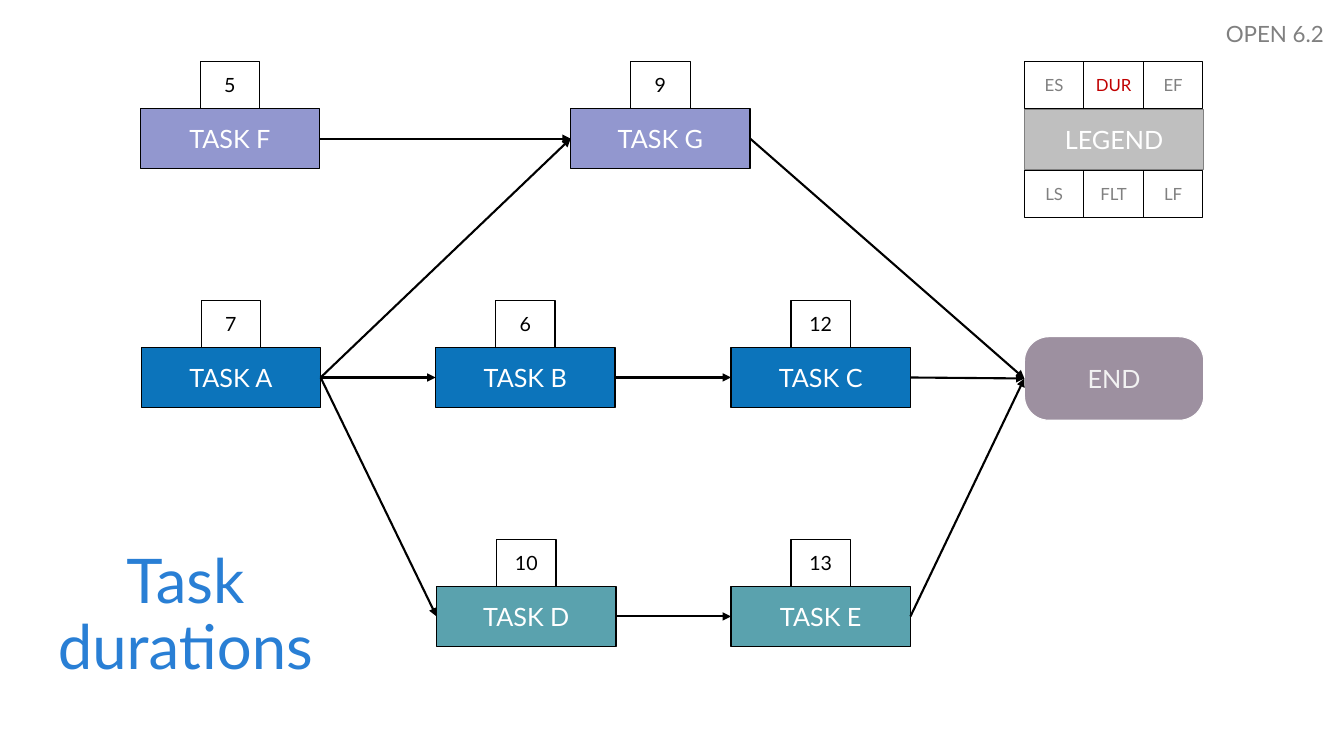
from dataclasses import dataclass

from lxml import etree
from pptx import Presentation
from pptx.dml.color import RGBColor
from pptx.enum.shapes import MSO_CONNECTOR, MSO_SHAPE
from pptx.enum.text import MSO_ANCHOR, PP_ALIGN
from pptx.oxml.ns import qn
from pptx.util import Inches, Pt

RECT, ROUND = MSO_SHAPE.RECTANGLE, MSO_SHAPE.ROUNDED_RECTANGLE
STRAIGHT = MSO_CONNECTOR.STRAIGHT
MIDDLE, TOP = MSO_ANCHOR.MIDDLE, MSO_ANCHOR.TOP
CENTER, RIGHT = PP_ALIGN.CENTER, PP_ALIGN.RIGHT
LEFT_SITE, RIGHT_SITE = 1, 3


@dataclass(frozen=True)
class Theme:
    font: str = "Lato"
    black: str = "000000"
    white: str = "FFFFFF"
    gray: str = "808080"
    silver: str = "BFBFBF"
    pale: str = "F2F2F2"
    red: str = "C00000"
    blue: str = "0C74BB"
    teal: str = "5AA2AE"
    violet: str = "9297CF"
    mauve: str = "9D90A0"
    sky: str = "297FD5"
    title: int = 44
    task: int = 18
    note: int = 16
    time: int = 14
    key: int = 12
    edge: float = 0.85
    arrow: float = 1.5


theme = Theme()


def write(shape, text, size=theme.task, color=theme.white, align=CENTER,
          anchor=MIDDLE, space=None):
    frame = shape.text_frame
    frame.word_wrap = True
    frame.vertical_anchor = anchor
    para = frame.paragraphs[0]
    para.alignment = align
    para.line_spacing = space
    run = para.add_run()
    run.text = text
    run.font.name = theme.font
    run.font.size = Pt(size)
    run.font.color.rgb = RGBColor.from_string(color)


def box(text, left, top, width, height, fill=None, line=theme.black,
        kind=RECT, **style):
    shape = slide.shapes.add_shape(
        kind, Inches(left), Inches(top), Inches(width), Inches(height))
    shape.shadow.inherit = False
    if fill:
        shape.fill.solid()
        shape.fill.fore_color.rgb = RGBColor.from_string(fill)
    else:
        shape.fill.background()
    shape.line.color.rgb = RGBColor.from_string(line)
    shape.line.width = Pt(theme.edge)
    shape.text_frame.margin_left = shape.text_frame.margin_right = 0
    write(shape, text, **style)
    return shape


deck = Presentation()
deck.slide_width, deck.slide_height = Inches(13.33), Inches(7.5)
slide = deck.slides.add_slide(deck.slide_layouts[5])

# Title and slide note
title = slide.shapes.title
title.left, title.top = Inches(0), Inches(5.39)
title.width, title.height = Inches(3.68), Inches(1.45)
write(title, "Task durations", size=theme.title, color=theme.sky, space=0.9)

note = slide.shapes.add_textbox(
    Inches(11.69), Inches(0.15), Inches(1.54), Inches(0.37))
write(note, "OPEN 6.2", size=theme.note, color=theme.gray, align=RIGHT,
      anchor=TOP)

# Tasks, each with its duration on top
TASK_W, TASK_H = 1.78, 0.59
CELL_W, CELL_H = 0.59, 0.47
tasks = [
    ("A", "7", 1.4, 3.45, theme.blue),
    ("B", "6", 4.32, 3.45, theme.blue),
    ("C", "12", 7.25, 3.45, theme.blue),
    ("D", "10", 4.33, 5.82, theme.teal),
    ("E", "13", 7.25, 5.82, theme.teal),
    ("F", "5", 1.39, 1.08, theme.violet),
    ("G", "9", 5.66, 1.08, theme.violet),
]
nodes = {}
for name, time, left, top, fill in tasks:
    nodes[name] = box(f"TASK {name}", left, top, TASK_W, TASK_H, fill=fill)
    box(time, left + (TASK_W - CELL_W) / 2, top - CELL_H, CELL_W, CELL_H,
        size=theme.time, color=theme.black)

# End node
END_X = 10.16
nodes["END"] = box("END", END_X, 3.34, TASK_W, 0.83, fill=theme.mauve,
                   line=theme.white, kind=ROUND, color=theme.pale)
nodes["END"].adjustments[0] = 0.294

# Legend
box("LEGEND", END_X, 1.09, TASK_W, TASK_H, fill=theme.silver, line=theme.gray)
for top, keys in ((0.61, ("ES", "DUR", "EF")), (1.69, ("LS", "FLT", "LF"))):
    for col, key in enumerate(keys):
        box(key, END_X + col * CELL_W, top, CELL_W, CELL_H, size=theme.key,
            color=theme.red if key == "DUR" else theme.gray)

# Arrows from right side to left side
links = [("A", "B"), ("B", "C"), ("C", "END"), ("A", "D"), ("D", "E"),
         ("E", "END"), ("F", "G"), ("A", "G"), ("G", "END")]
for start, end in links:
    arrow = slide.shapes.add_connector(STRAIGHT, 0, 0, 0, 0)
    arrow.begin_connect(nodes[start], RIGHT_SITE)
    arrow.end_connect(nodes[end], LEFT_SITE)
    arrow.line.color.rgb = RGBColor.from_string(theme.black)
    arrow.line.width = Pt(theme.arrow)
    etree.SubElement(arrow.line._get_or_add_ln(), qn("a:tailEnd"),
                     type="triangle")
    etree.SubElement(arrow._element.spPr, qn("a:effectLst"))

deck.save("out.pptx")
